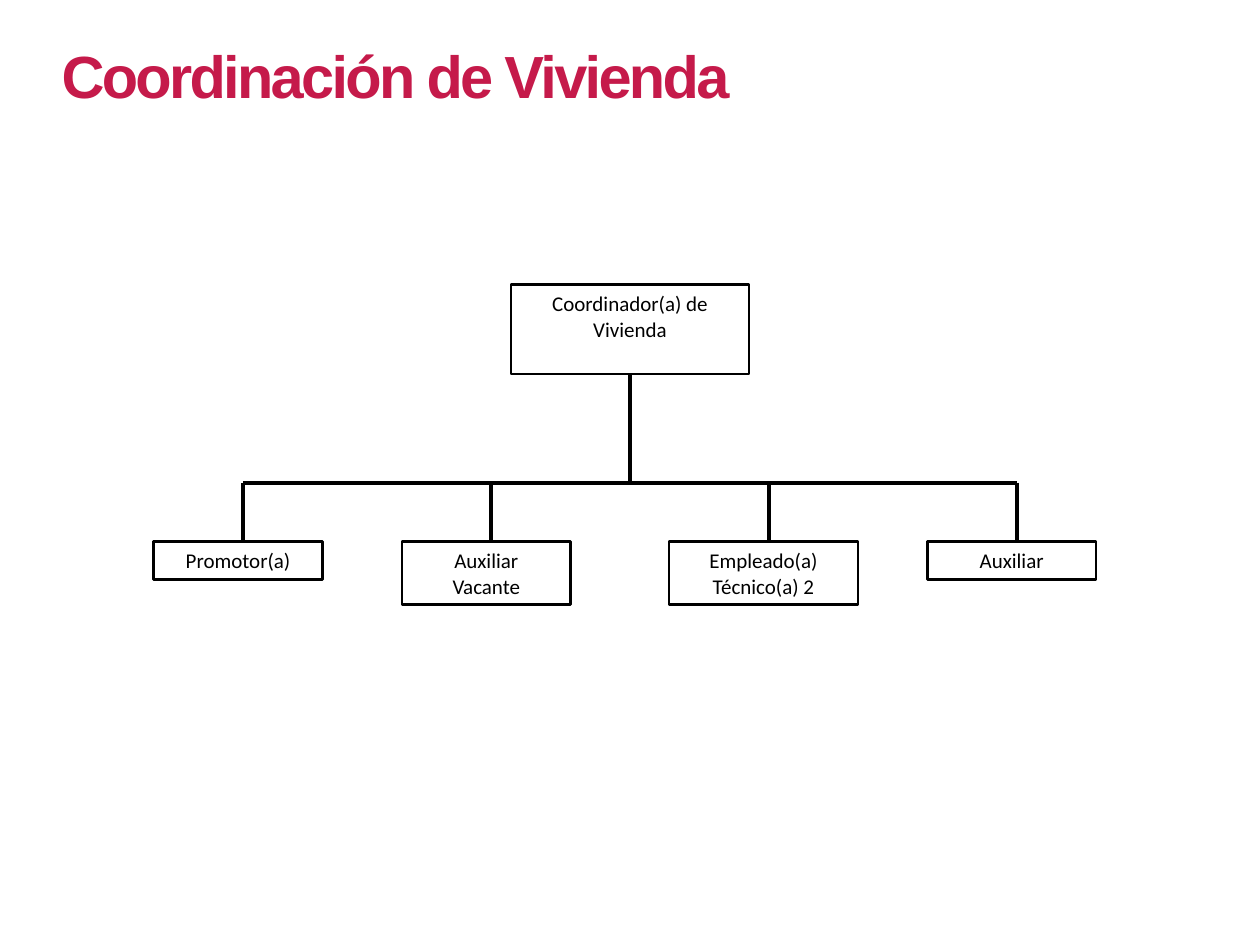
from dataclasses import dataclass

from lxml import etree
from pptx import Presentation
from pptx.dml.color import RGBColor
from pptx.enum.shapes import MSO_CONNECTOR as Connector, MSO_SHAPE as Shape
from pptx.enum.text import MSO_ANCHOR as Anchor, PP_ALIGN as Align
from pptx.oxml.ns import qn
from pptx.util import Inches, Pt

# Slide grid: 100 columns by 75 rows of square cells
COLUMNS, ROWS = 100, 75
CELL = Inches(0.1)

# Chart levels, in rows, and the central axis, in columns
AXIS = COLUMNS / 2
HEAD_TOP, HEAD_WIDTH, HEAD_HEIGHT = 22.6, 18.9, 7.1
BUS_ROW, STAFF_TOP = 38.3, 43
STAFF_SHIFT = 0.4  # staff boxes sit slightly left of their lines

# Distance from the axis, width, height and lines of each post
STAFF = [
    (-30.7, 13.4, 3, ["Promotor(a)"]),
    (-11, 13.4, 5, ["Auxiliar", "Vacante"]),
    (11, 15, 5, ["Empleado(a) Técnico(a) 2"]),
    (30.7, 13.4, 3, ["Auxiliar"]),
]


@dataclass(frozen=True)
class Theme:
    title_color: RGBColor = RGBColor(0xC5, 0x1A, 0x4A)
    ink: RGBColor = RGBColor(0, 0, 0)
    paper: RGBColor = RGBColor(0xFF, 0xFF, 0xFF)
    title_font: str = "Arial"
    body_font: str = "Calibri"
    title_size: Pt = Pt(34)
    body_size: Pt = Pt(12)
    box_line: Pt = Pt(1.5)
    link_line: Pt = Pt(2.25)
    title_spacing: str = "-150"  # hundredths of a point


THEME = Theme()


def cells(*counts):
    return [round(count * CELL) for count in counts]


def style_font(font, name, size, color):
    font.name, font.size = name, size
    font.color.rgb = color


def add_title(slide, text):
    box = slide.shapes.add_textbox(*cells(3.9, 2.6, 69.7, 6.9))
    text_frame = box.text_frame
    text_frame.word_wrap = True
    text_frame.text = text
    run = text_frame.paragraphs[0].runs[0]
    style_font(run.font, THEME.title_font, THEME.title_size, THEME.title_color)
    run.font.bold = True
    run._r.get_or_add_rPr().set("spc", THEME.title_spacing)


def add_post(slide, center, top, width, height, lines):
    box = slide.shapes.add_shape(
        Shape.RECTANGLE, *cells(center - width / 2, top, width, height))
    box.shadow.inherit = False
    box.fill.solid()
    box.fill.fore_color.rgb = THEME.paper
    box.line.color.rgb = THEME.ink
    box.line.width = THEME.box_line
    text_frame = box.text_frame
    text_frame.word_wrap = True
    text_frame.vertical_anchor = Anchor.TOP
    text_frame.text = "\n".join(lines)
    for paragraph in text_frame.paragraphs:
        paragraph.alignment = Align.CENTER
        for run in paragraph.runs:
            style_font(run.font, THEME.body_font, THEME.body_size, THEME.ink)
    return box


def add_link(slide, start, end):
    link = slide.shapes.add_connector(
        Connector.STRAIGHT, *cells(*start, *end))
    link.line.color.rgb = THEME.ink
    link.line.width = THEME.link_line
    etree.SubElement(link._element.spPr, qn("a:effectLst"))
    return link


def main():
    presentation = Presentation()
    presentation.slide_width, presentation.slide_height = cells(COLUMNS, ROWS)
    slide = presentation.slides.add_slide(presentation.slide_layouts[6])

    # Head of the area and its trunk line
    head = add_post(slide, AXIS, HEAD_TOP, HEAD_WIDTH, HEAD_HEIGHT,
                    ["Coordinador(a) de Vivienda"])
    trunk = add_link(slide, (AXIS, HEAD_TOP + HEAD_HEIGHT), (AXIS, BUS_ROW))
    trunk.begin_connect(head, 2)

    # Horizontal line across all the posts
    first, last = AXIS + STAFF[0][0], AXIS + STAFF[-1][0]
    add_link(slide, (last, BUS_ROW), (first, BUS_ROW))

    # Posts, each hanging from its own line
    for offset, width, height, lines in STAFF:
        column = AXIS + offset
        add_link(slide, (column, BUS_ROW), (column, STAFF_TOP))
        add_post(slide, column - STAFF_SHIFT, STAFF_TOP, width, height, lines)

    add_title(slide, "Coordinación de Vivienda")
    presentation.save("out.pptx")


if __name__ == "__main__":
    main()
